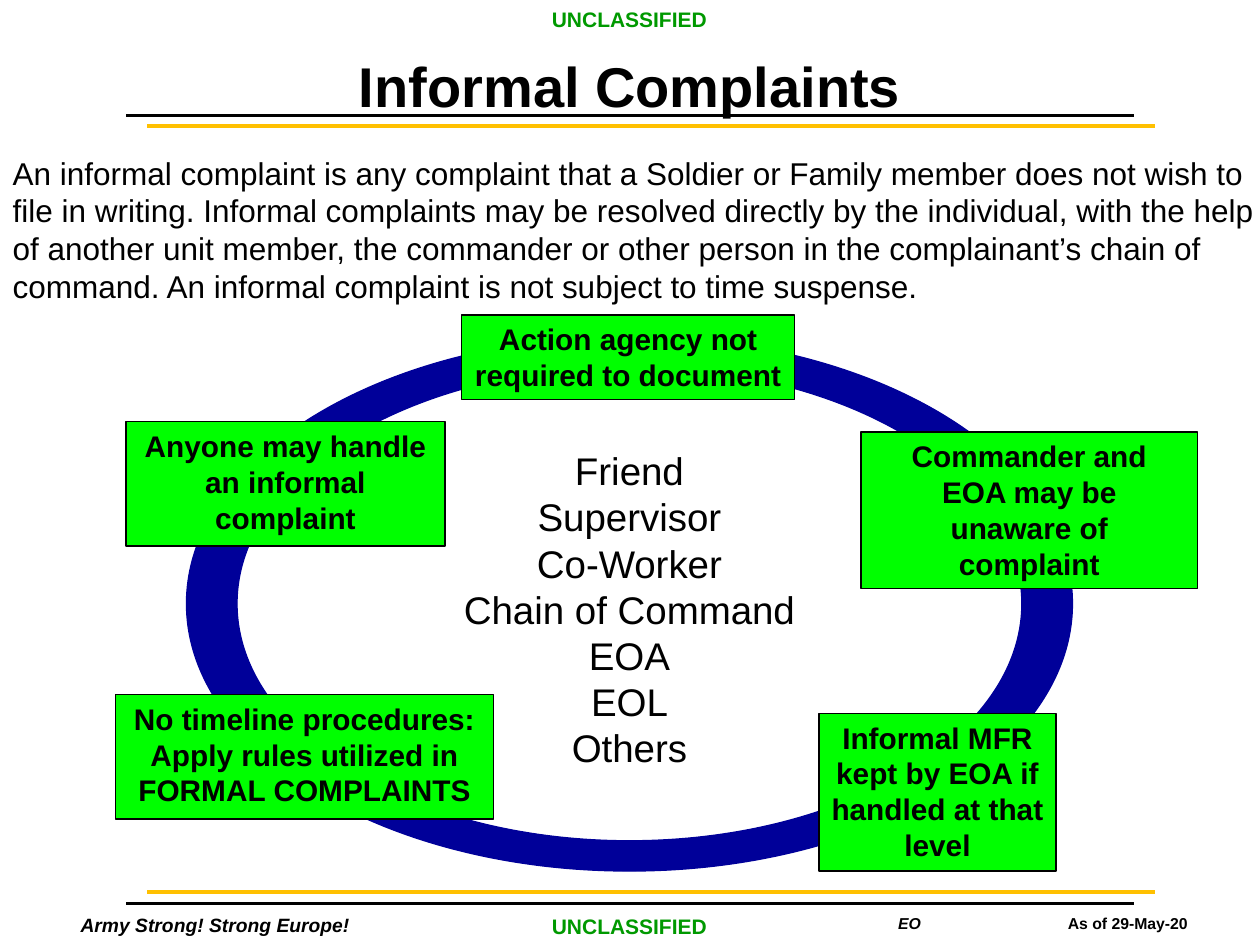
from lxml import etree
from pptx import Presentation
from pptx.dml.color import RGBColor
from pptx.enum import shapes, text
from pptx.oxml.ns import qn
from pptx.util import Cm, Pt

BLACK = RGBColor(0x00, 0x00, 0x00)
GOLD = RGBColor(0xFF, 0xC0, 0x00)
GREEN = RGBColor(0x00, 0x99, 0x00)
LIME = RGBColor(0x00, 0xFF, 0x00)
NAVY = RGBColor(0x00, 0x00, 0x99)


def write(shape, lines, size, color=BLACK, bold=False, italic=False,
          align=text.PP_ALIGN.CENTER, wrap=False):
    """Fill a shape with one paragraph per line, anchored at the top."""
    frame = shape.text_frame
    frame.text = "\n".join(lines)
    frame.word_wrap = wrap
    frame.auto_size = text.MSO_AUTO_SIZE.NONE
    frame.vertical_anchor = text.MSO_ANCHOR.TOP
    for para in frame.paragraphs:
        para.alignment = align
        if shape.is_placeholder:
            para.space_before = Pt(0)
            props = para._p.get_or_add_pPr()
            props.set("marL", "0")
            props.set("indent", "0")
            etree.SubElement(props, qn("a:buNone"))
        font = para.font
        font.name, font.size = "Arial", Pt(size)
        font.bold, font.italic = bold, italic
        font.color.rgb = color


def place(shape, left, top, width, height):
    shape.left, shape.top = Cm(left), Cm(top)
    shape.width, shape.height = Cm(width), Cm(height)


deck = Presentation()
deck.slide_width, deck.slide_height = Cm(25.4), Cm(19.05)
slide = deck.slides.add_slide(deck.slide_layouts[1])
items = slide.shapes

# Title and definition
title, body = slide.placeholders
place(title, 0, 0.91, 25.4, 1.63)
write(title, ["Informal Complaints"], 32, bold=True, wrap=True)
title.text_frame.vertical_anchor = text.MSO_ANCHOR.MIDDLE

place(body, 0, 2.97, 25.6, 3.33)
write(body, [
    "An informal complaint is any complaint that a Soldier or Family member "
    "does not wish to file in writing. Informal complaints may be resolved "
    "directly by the individual, with the help of another unit member, the "
    "commander or other person in the complainant’s chain of command. An "
    "informal complaint is not subject to time suspense."
], 18, align=text.PP_ALIGN.LEFT, wrap=True)

# Header and footer rules
for left, top, color in [(2.54, 2.33, BLACK), (2.97, 2.54, GOLD),
                         (2.54, 18.21, BLACK), (2.97, 17.98, GOLD)]:
    rule = items.add_connector(shapes.MSO_CONNECTOR.STRAIGHT, Cm(left), Cm(top),
                               Cm(left + 20.32), Cm(top))
    rule.line.color.rgb = color
    rule.line.width = Pt(2)
    etree.SubElement(rule._element.spPr, qn("a:effectLst"))

# Header and footer labels: left, top, width, words, size, colour, bold, italic
for left, top, width, words, *style in [
    (0.43, 18.29, 7.82, "Army Strong! Strong Europe!", 11, BLACK, True, True),
    (20.55, 18.29, 4.37, "As of 29-May-20", 9, BLACK, True, False),
    (16.15, 18.29, 4.37, "EO", 9, BLACK, True, True),
    (10.86, 0, 3.66, "UNCLASSIFIED", 12, GREEN, True, False),
    (10.86, 18.29, 3.66, "UNCLASSIFIED", 12, GREEN, True, False),
]:
    label = items.add_textbox(Cm(left), Cm(top), Cm(width), Cm(0.75))
    write(label, [words], *style)

# Ring: quarter points of the outer ellipse, then of the inner one reversed
outer, inner = [
    [(Cm(12.69 + wide * x), Cm(12.17 + high * y))
     for x, y in [(-1, 0), (0, turn), (1, 0), (0, -turn)]]
    for wide, high, turn in [(8.93, 5.39, -1), (7.91, 4.78, 1)]
]
pen = items.build_freeform(*outer[0])
pen.add_line_segments(outer[1:] + outer[:1])
pen.move_to(*inner[0])
pen.add_line_segments(inner[1:] + inner[:1])
ring = pen.convert_to_shape()
ring.shadow.inherit = False
ring.fill.solid()
ring.fill.fore_color.rgb = NAVY
ring.line.color.rgb = NAVY
ring.line.width = Pt(0.75)

# Bend each straight side of the ring into a quarter of an ellipse
BEND = 0.5523
mid = ring.width / 2, ring.height / 2
last = None
for step in list(ring._element.iter(qn("a:moveTo"), qn("a:lnTo"))):
    spot = [int(step[0].get(axis)) for axis in "xy"]
    if step.tag == qn("a:lnTo"):
        first = [a + BEND * (b - m) for a, b, m in zip(last, spot, mid)]
        second = [b + BEND * (a - m) for a, b, m in zip(last, spot, mid)]
        curve = etree.Element(qn("a:cubicBezTo"))
        for x, y in (first, second, spot):
            etree.SubElement(curve, qn("a:pt"), x=str(round(x)), y=str(round(y)))
        step.getparent().replace(step, curve)
    last = spot

people = items.add_textbox(Cm(9.07), Cm(8.89), Cm(7.24), Cm(7.09))
write(people, ["Friend", "Supervisor", "Co-Worker", "Chain of Command",
               "EOA", "EOL", "Others"], 22)

# Facts around the ring
for left, top, width, height, lines in [
    (9.31, 6.35, 6.71, 1.7, ["Action agency not", "required to document"]),
    (17.36, 8.71, 6.78, 3.15,
     ["Commander and", "EOA may be", "unaware of", "complaint"]),
    (2.54, 8.5, 6.43, 2.51,
     ["Anyone may handle", "an informal", "complaint"]),
    (2.33, 14, 7.62, 2.51,
     ["No timeline procedures:", "Apply rules utilized in", "FORMAL COMPLAINTS"]),
    (16.51, 14.38, 4.78, 3.18,
     ["Informal MFR", "kept by EOA if", "handled at that", "level"]),
]:
    fact = items.add_shape(shapes.MSO_SHAPE.RECTANGLE, Cm(left), Cm(top),
                           Cm(width), Cm(height))
    fact.shadow.inherit = False
    fact.fill.solid()
    fact.fill.fore_color.rgb = LIME
    fact.line.color.rgb = BLACK
    fact.line.width = Pt(0.75)
    write(fact, lines, 17, bold=True)

deck.save("out.pptx")
